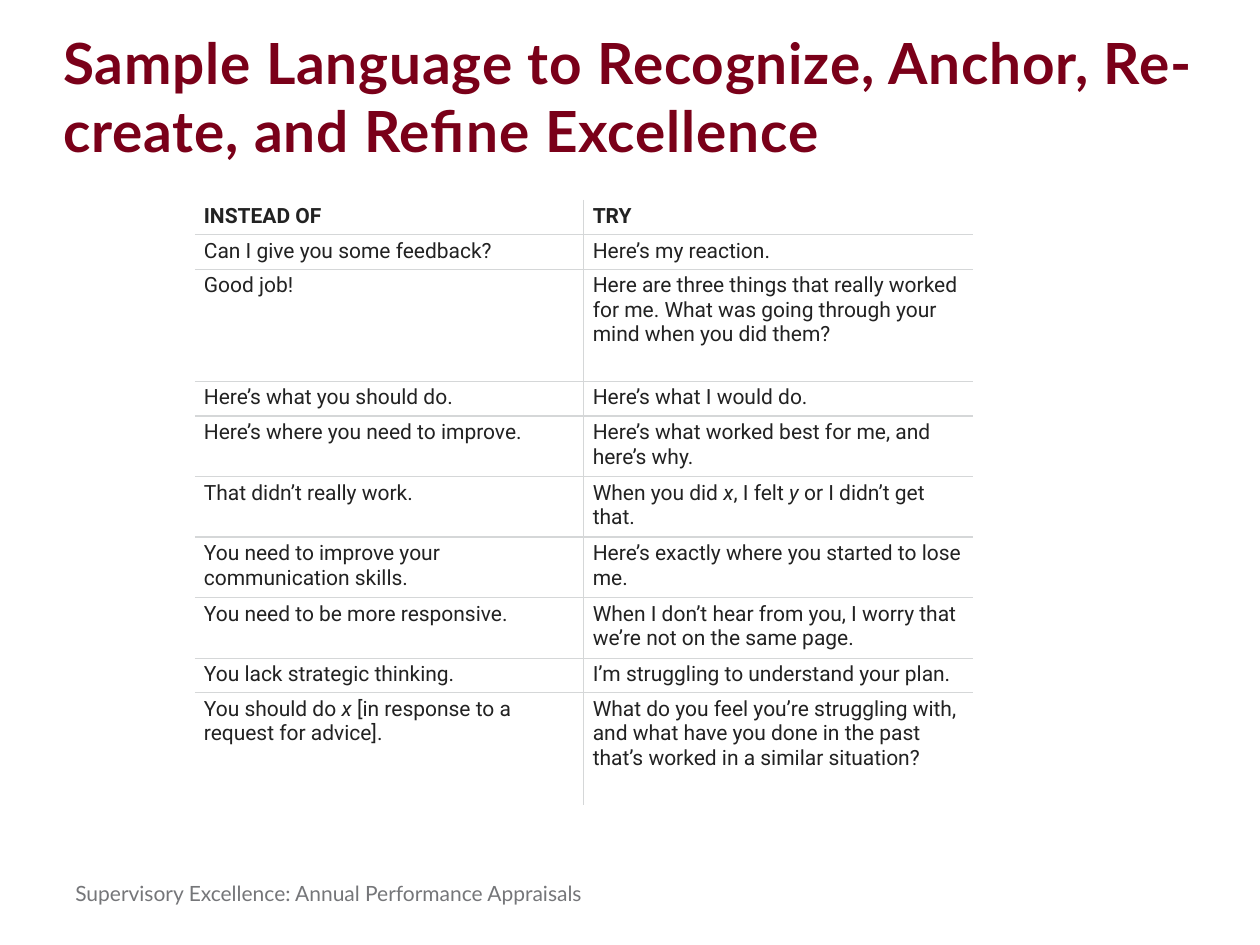
import pptx
import pptx.dml.color
import pptx.enum.text
import pptx.oxml
import pptx.oxml.ns
import pptx.util

Cm, Pt = pptx.util.Cm, pptx.util.Pt
ANCHOR, ALIGN = pptx.enum.text.MSO_ANCHOR, pptx.enum.text.PP_ALIGN

TITLE = "Sample Language to Recognize, Anchor, Re-create, and Refine Excellence"
FOOTER = "Supervisory Excellence: Annual Performance Appraisals"

# Asterisks enclose italics; each row is (height in cm, left text, right text).
ONE_LINE, TWO_LINES, TALL = 0.7, 1.22, 2.26
PHRASES = [
    (ONE_LINE, "INSTEAD OF", "TRY"),
    (ONE_LINE, "Can I give you some feedback?", "Here’s my reaction."),
    (TALL, "Good job!",
     "Here are three things that really worked for me. "
     "What was going through your mind when you did them?"),
    (ONE_LINE, "Here’s what you should do.", "Here’s what I would do."),
    (TWO_LINES, "Here’s where you need to improve.",
     "Here’s what worked best for me, and here’s why."),
    (TWO_LINES, "That didn’t really work.",
     "When you did *x*, I felt *y* or I didn’t get that."),
    (TWO_LINES, "You need to improve your communication skills.",
     "Here’s exactly where you started to lose me."),
    (TWO_LINES, "You need to be more responsive.",
     "When I don’t hear from you, I worry that we’re not on the same page."),
    (ONE_LINE, "You lack strategic thinking.", "I’m struggling to understand your plan."),
    (TALL, "You should do *x* [in response to a request for advice].",
     "What do you feel you’re struggling with, and what have you done "
     "in the past that’s worked in a similar situation?"),
]


def rgb(hex_color):
    return pptx.dml.color.RGBColor.from_string(hex_color)


def set_attrs(obj, values):
    for name, value in values.items():
        setattr(obj, name, value)


class Deck:
    TITLE_FONT = {"name": "Lato", "size": Pt(32.4), "bold": True}
    FOOTER_FONT = {"name": "Lato", "size": Pt(12)}
    CELL_FONT = {"name": "Roboto", "size": Pt(12)}
    CELL_FORMAT = {"margin_left": Cm(0.18), "margin_right": Cm(0.18),
                   "margin_top": Cm(0.08), "margin_bottom": Cm(0.08),
                   "vertical_anchor": ANCHOR.TOP}
    MAROON, GRAY, INK, RULE, WHITE = "7A0019", "757679", "222222", "D5D7D8", "FFFFFF"

    def __init__(self, width, height):
        self.prs = pptx.Presentation()
        set_attrs(self.prs, {"slide_width": Cm(width), "slide_height": Cm(height)})
        self.s = None

    def add_slide(self):
        self.s = self.prs.slides.add_slide(self.prs.slide_layouts[5])

    def run(self, p, text, font, color):
        r = p.add_run()
        r.text = text
        set_attrs(r.font, font)
        r.font.color.rgb = rgb(color)
        return r

    def title(self, text, left, top, width, height):
        sp = self.s.shapes.title
        set_attrs(sp, {"left": Cm(left), "top": Cm(top),
                       "width": Cm(width), "height": Cm(height)})
        tf = sp.text_frame
        set_attrs(tf, {"margin_left": 0, "margin_right": 0, "margin_top": 0,
                       "margin_bottom": 0, "word_wrap": True,
                       "vertical_anchor": ANCHOR.TOP,
                       "auto_size": pptx.enum.text.MSO_AUTO_SIZE.NONE})
        p = tf.paragraphs[0]
        p.alignment = ALIGN.LEFT
        r = self.run(p, text, self.TITLE_FONT, self.MAROON)
        r._r.get_or_add_rPr().set("spc", "50")

    def footer(self, text, left, top, width, height):
        sp = self.s.shapes.add_textbox(Cm(left), Cm(top), Cm(width), Cm(height))
        sp.text_frame.word_wrap = True
        self.run(sp.text_frame.paragraphs[0], text, self.FOOTER_FONT, self.GRAY)

    def borders(self, cell, ruled_sides):
        """Rule the given sides of a cell and leave the others without a line."""
        tcPr = cell._tc.get_or_add_tcPr()
        for i, side in enumerate("LRTB"):
            paint = (f'<a:solidFill><a:srgbClr val="{self.RULE}"/></a:solidFill>'
                     if side in ruled_sides else "<a:noFill/>")
            tcPr.insert(i, pptx.oxml.parse_xml(
                f'<a:ln{side} {pptx.oxml.ns.nsdecls("a")} w="{Pt(0.75)}">'
                f"{paint}</a:ln{side}>"))

    def cell(self, cell, text, bold, ruled_sides):
        set_attrs(cell, self.CELL_FORMAT)
        cell.fill.solid()
        cell.fill.fore_color.rgb = rgb(self.WHITE)
        self.borders(cell, ruled_sides)
        p = cell.text_frame.paragraphs[0]
        for i, part in enumerate(text.split("*")):
            font = {**self.CELL_FONT, "bold": bold, "italic": i % 2 == 1}
            self.run(p, part, font, self.INK)

    def table(self, rows, left, top, col_width):
        """Draw a two-column table with inner rules only."""
        height = sum(row[0] for row in rows)
        table = self.s.shapes.add_table(
            len(rows), 2, Cm(left), Cm(top), Cm(2 * col_width), Cm(height)).table
        set_attrs(table, {"first_row": False, "horz_banding": False})
        for column in table.columns:
            column.width = Cm(col_width)
        for i, (row_height, *texts) in enumerate(rows):
            table.rows[i].height = Cm(row_height)
            across = ("T" if i > 0 else "") + ("B" if i < len(rows) - 1 else "")
            for j, text in enumerate(texts):
                self.cell(table.cell(i, j), text, i == 0, across + "RL"[j])


def main():
    deck = Deck(25.4, 19.05)
    deck.add_slide()
    deck.table(PHRASES, 3.93, 4.03, 7.84)
    deck.title(TITLE, 1.27, 0.56, 22.86, 3.25)
    deck.footer(FOOTER, 1.27, 17.63, 16.97, 0.79)
    deck.prs.save("out.pptx")


if __name__ == "__main__":
    main()
